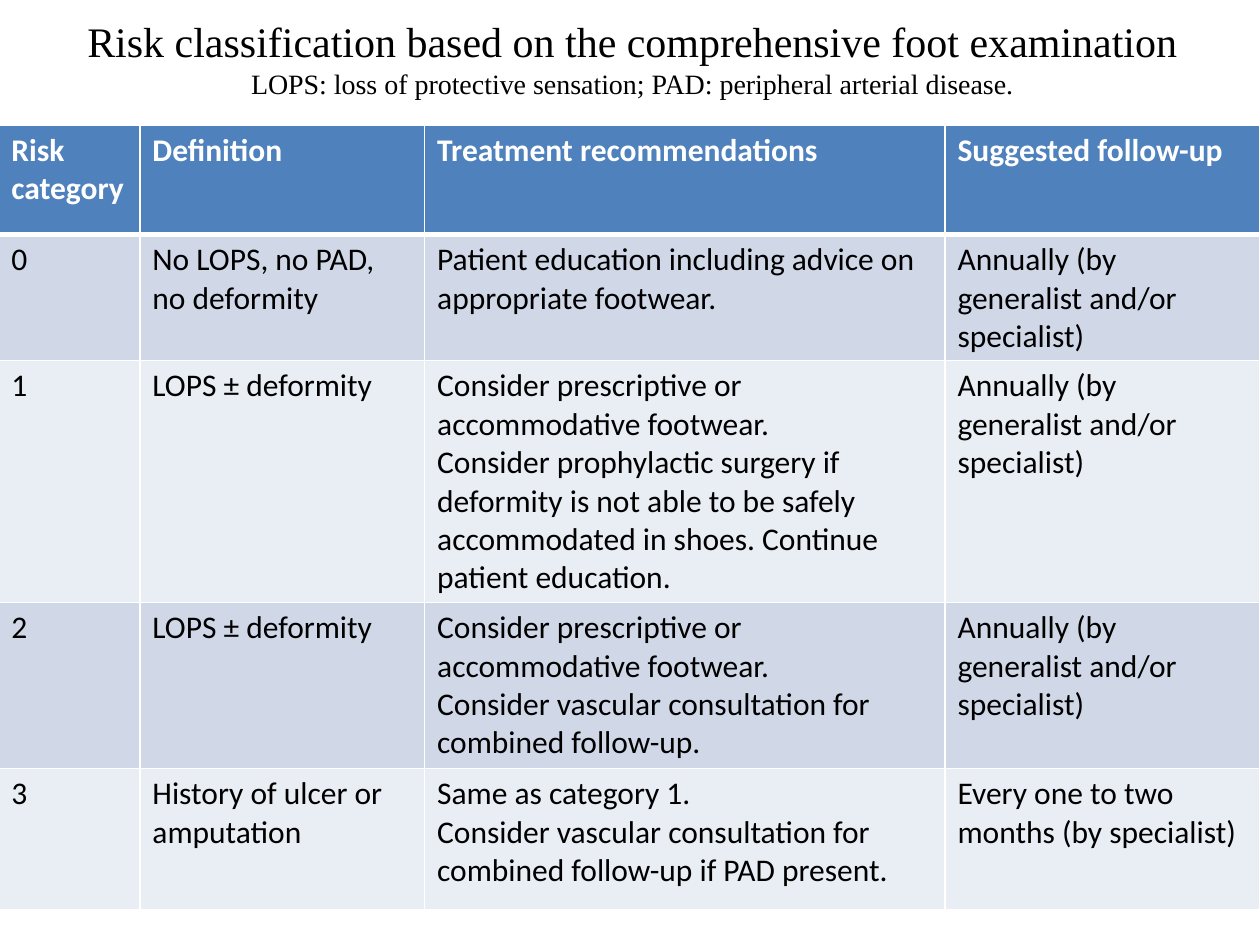
from dataclasses import dataclass

from lxml.etree import SubElement
from pptx import Presentation
from pptx.dml.color import RGBColor
from pptx.enum.text import MSO_ANCHOR, PP_ALIGN
from pptx.oxml.ns import qn
from pptx.util import Inches, Pt


@dataclass(frozen=True)
class Theme:
    """Colours, fonts and type sizes of the slide."""
    black: str = "000000"
    white: str = "FFFFFF"
    header: str = "4F81BD"
    bands: tuple = ("D0D8E8", "E9EDF4")
    title_font: str = "Times New Roman"
    table_font: str = "Calibri"
    title_size: int = 24
    subtitle_size: int = 16
    table_size: int = 18
    rule: int = 1
    header_rule: int = 3


THEME = Theme()
TITLE = "Risk classification based on the comprehensive foot examination"
SUBTITLE = "LOPS: loss of protective sensation; PAD: peripheral arterial disease."
YEARLY = "Annually (by generalist and/or specialist)"
FOOTWEAR = "Consider prescriptive or accommodative footwear."
SURGERY = ("Consider prophylactic surgery if deformity is not able to be safely "
           "accommodated in shoes. Continue patient education.")
VASCULAR = "Consider vascular consultation for combined follow-up"
COLUMN_WIDTHS = (1.12, 2.26, 4.13, 2.5)
ROW_HEIGHTS = (0.87, 0.87, 1.92, 1.32, 1.12)
ROWS = (
    ("Risk\ncategory", "Definition", "Treatment recommendations", "Suggested follow-up"),
    ("0", "No LOPS, no PAD, no deformity",
     "Patient education including advice on appropriate footwear.", YEARLY),
    ("1", "LOPS ± deformity", f"{FOOTWEAR}\n{SURGERY}", YEARLY),
    ("2", "LOPS ± deformity", f"{FOOTWEAR}\n{VASCULAR}.", YEARLY),
    ("3", "History of ulcer or amputation",
     f"Same as category 1.\n{VASCULAR} if PAD present.",
     "Every one to two months (by specialist)"),
)


def add_run(para, text, font, size, color, bold=False):
    """Append one formatted run to a paragraph."""
    span = para.add_run()
    span.text = text
    span.font.name = font
    span.font.size = Pt(size)
    span.font.bold = bold
    span.font.color.rgb = RGBColor.from_string(color)


def add_title(page):
    """Add the centred title with its abbreviations line."""
    box = page.shapes.add_textbox(Inches(0.08), Inches(0), Inches(9.88), Inches(0.92))
    frame = box.text_frame
    frame.word_wrap = True
    frame.vertical_anchor = MSO_ANCHOR.MIDDLE
    para = frame.paragraphs[0]
    para.alignment = PP_ALIGN.CENTER
    add_run(para, TITLE, THEME.title_font, THEME.title_size, THEME.black)
    para.add_line_break()
    add_run(para, SUBTITLE, THEME.title_font, THEME.subtitle_size, THEME.black)


def set_borders(cell, bottom, top):
    """Draw white rules on all four sides of a cell."""
    properties = cell._tc.get_or_add_tcPr()
    sides = {"L": THEME.rule, "R": THEME.rule, "T": top, "B": bottom}
    for index, (side, width) in enumerate(sides.items()):
        line = SubElement(properties, qn(f"a:ln{side}"), w=str(Pt(width)))
        fill = SubElement(line, qn("a:solidFill"))
        SubElement(fill, qn("a:srgbClr"), val=THEME.white)
        properties.insert(index, line)


def fill_cell(cell, text, row_index):
    """Write and style one table cell according to its row."""
    is_header = row_index == 0
    cell.fill.solid()
    fill = THEME.header if is_header else THEME.bands[(row_index - 1) % 2]
    cell.fill.fore_color.rgb = RGBColor.from_string(fill)
    color = THEME.white if is_header else THEME.black
    frame = cell.text_frame
    for index, line in enumerate(text.split("\n")):
        para = frame.add_paragraph() if index else frame.paragraphs[0]
        add_run(para, line, THEME.table_font, THEME.table_size, color, is_header)
    set_borders(cell, THEME.header_rule if is_header else THEME.rule,
                THEME.header_rule if row_index == 1 else THEME.rule)


def add_risk_table(page):
    """Add the table of risk categories."""
    table = page.shapes.add_table(
        len(ROWS), len(COLUMN_WIDTHS), Inches(-0.01), Inches(0.99),
        Inches(sum(COLUMN_WIDTHS)), Inches(sum(ROW_HEIGHTS))).table
    for column, width in zip(table.columns, COLUMN_WIDTHS):
        column.width = Inches(width)
    for row_index, (row, height) in enumerate(zip(table.rows, ROW_HEIGHTS)):
        row.height = Inches(height)
        for cell, text in zip(row.cells, ROWS[row_index]):
            fill_cell(cell, text, row_index)


def main():
    """Build the slide and save the deck."""
    deck = Presentation()
    deck.slide_width = Inches(10)
    deck.slide_height = Inches(7.5)
    page = deck.slides.add_slide(deck.slide_layouts[6])
    add_title(page)
    add_risk_table(page)
    deck.save("out.pptx")


if __name__ == "__main__":
    main()
